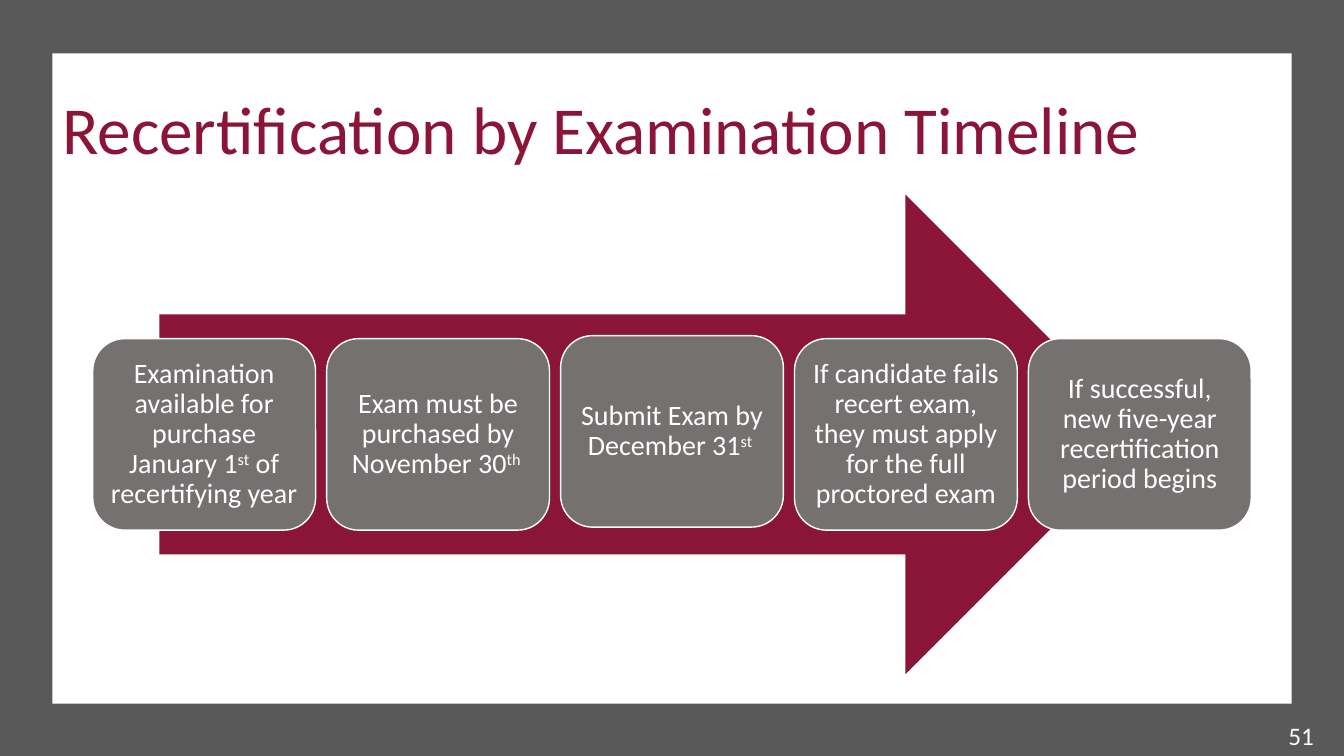
import pptx
import pptx.util
import pptx.dml.color
import pptx.enum.shapes
import pptx.enum.text

Inches = pptx.util.Inches
Pt = pptx.util.Pt
SHAPE = pptx.enum.shapes.MSO_SHAPE
ALIGN = pptx.enum.text.PP_ALIGN
ANCHOR = pptx.enum.text.MSO_ANCHOR

# Content: each step is a list of (text, is superscript)
TITLE = "Recertification by Examination Timeline"
PAGE_NUMBER = "51"
STEPS = [
    [("Examination available for purchase January 1", False), ("st", True),
     (" of recertifying year", False)],
    [("Exam must be purchased by November 30", False), ("th ", True)],
    [("Submit Exam by December 31", False), ("st ", True)],
    [("If candidate fails recert exam, they must apply for the full proctored exam", False)],
    [("If successful, new five-year recertification period begins", False)],
]
COLORS = {"frame": "595959", "white": "FFFFFF", "maroon": "8A1538", "step": "767171"}

# Layout
STEP_LEFT, STEP_WIDTH, STEP_HEIGHT, STEP_PITCH = 0.92, 2.21, 1.9, 2.32
STEP_TOP, RAISED_TOP, RAISED_STEP = 3.36, 3.33, 2
STEP_INSET = 0.08


def color(name):
    return pptx.dml.color.RGBColor.from_string(COLORS[name])


def add_block(page, kind, box, fill, outline=None):
    shape = page.shapes.add_shape(kind, *map(Inches, box))
    shape.shadow.inherit = False
    shape.fill.solid()
    shape.fill.fore_color.rgb = color(fill)
    if outline:
        shape.line.color.rgb = color(outline)
        shape.line.width = Pt(1)
    else:
        shape.line.fill.background()
    return shape


def write(frame, spans, size, ink, align, anchor):
    frame.word_wrap = True
    frame.auto_size = pptx.enum.text.MSO_AUTO_SIZE.NONE
    frame.vertical_anchor = anchor
    para = frame.paragraphs[0]
    para.alignment = align
    style = {"name": "Calibri", "size": Pt(size)}
    for text, raised in spans:
        span = para.add_run()
        span.text = text
        for key, value in style.items():
            setattr(span.font, key, value)
        span.font.color.rgb = color(ink)
        if raised:
            span.font._element.set("baseline", "30000")
    return para


deck = pptx.Presentation()
deck.slide_width, deck.slide_height = Inches(13.33), Inches(7.5)
page = deck.slides.add_slide(deck.slide_layouts[5])

# Grey frame, white panel and arrow
add_block(page, SHAPE.RECTANGLE, (0, 0, 13.33, 7.5), "frame")
add_block(page, SHAPE.RECTANGLE, (0.52, 0.53, 12.29, 6.45), "white")
add_block(page, SHAPE.RIGHT_ARROW, (1.58, 1.93, 9.78, 4.76), "maroon")

# Timeline steps
for index, spans in enumerate(STEPS):
    top = RAISED_TOP if index == RAISED_STEP else STEP_TOP
    box = (STEP_LEFT + index * STEP_PITCH, top, STEP_WIDTH, STEP_HEIGHT)
    step = add_block(page, SHAPE.ROUNDED_RECTANGLE, box, "step", "white")
    for side in ("left", "top", "right", "bottom"):
        setattr(step.text_frame, "margin_" + side, Inches(STEP_INSET))
    para = write(step.text_frame, spans, 20, "white", ALIGN.CENTER, ANCHOR.MIDDLE)
    para.line_spacing = 0.9

# Title, brought in front of the panel
title = page.shapes.title
title.left, title.top, title.width, title.height = map(Inches, (0.52, 0.82, 10.93, 0.91))
write(title.text_frame, [(TITLE, False)], 48, "maroon", ALIGN.LEFT, ANCHOR.TOP)
title.element.getparent().append(title.element)

# Page number
number = page.shapes.add_textbox(*map(Inches, (10.13, 7.1, 3, 0.4)))
write(number.text_frame, [(PAGE_NUMBER, False)], 18, "white", ALIGN.RIGHT, ANCHOR.MIDDLE)

deck.save("out.pptx")
